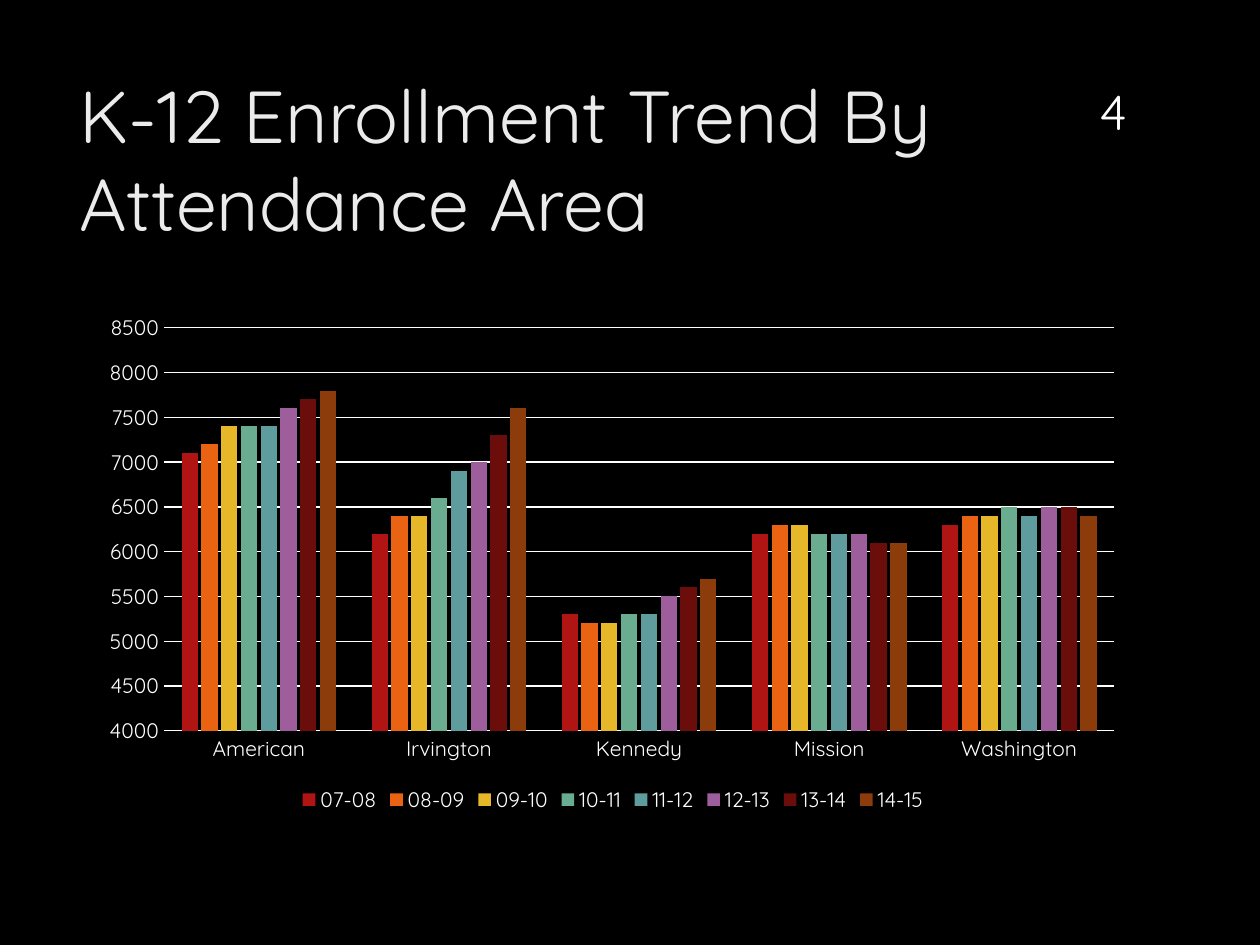
from dataclasses import dataclass

from lxml import etree
from pptx import Presentation, util as u
from pptx.chart.data import CategoryChartData
from pptx.dml.color import RGBColor
from pptx.enum import chart as ch, text

FONT = "Quicksand"
COLORS = {"background": "000000", "title": "EBEBEB", "body": "FFFFFF"}
SLIDE_W, SLIDE_H = u.Inches(10), u.Inches(7.5)
AREAS = ["American", "Irvington", "Kennedy", "Mission", "Washington"]


@dataclass(frozen=True)
class Box:
    """Position and size in inches."""
    left: float
    top: float
    width: float
    height: float

    def lengths(self) -> list:
        return [u.Inches(v) for v in (self.left, self.top, self.width, self.height)]


@dataclass(frozen=True)
class SchoolYear:
    name: str
    color: str
    enrollment: tuple


YEARS = [
    SchoolYear("07-08", "B01513", (7100, 6200, 5300, 6200, 6300)),
    SchoolYear("08-09", "EA6312", (7200, 6400, 5200, 6300, 6400)),
    SchoolYear("09-10", "E6B729", (7400, 6400, 5200, 6300, 6400)),
    SchoolYear("10-11", "6AAC90", (7400, 6600, 5300, 6200, 6500)),
    SchoolYear("11-12", "5F9C9D", (7400, 6900, 5300, 6200, 6400)),
    SchoolYear("12-13", "9E5E9B", (7600, 7000, 5500, 6200, 6500)),
    SchoolYear("13-14", "6A0D0B", (7700, 7300, 5600, 6100, 6500)),
    SchoolYear("14-15", "8C3B0B", (7800, 7600, 5700, 6100, 6400)),
]


def rgb(name: str) -> RGBColor:
    return RGBColor.from_string(COLORS[name])


def style_font(font, size: float, color: str) -> None:
    font.name, font.size, font.bold = FONT, u.Pt(size), False
    font.color.rgb = rgb(color)


def write(frame, words: str, size: float, color: str, align, anchor) -> None:
    frame.word_wrap = True
    frame.auto_size = text.MSO_AUTO_SIZE.NONE
    frame.vertical_anchor = anchor
    paragraph = frame.paragraphs[0]
    paragraph.alignment = align
    run = paragraph.add_run()
    run.text = words
    style_font(run.font, size, color)


def style_line(line) -> None:
    line.color.rgb = rgb("body")
    line.width = u.Pt(0.75)


def place_plot(chart, shares: Box) -> None:
    """Fix the inner plot area, in shares of the chart's size."""
    plot_area = chart.plots[0]._element.getparent()
    ns = etree.QName(plot_area).namespace
    for old in plot_area.findall(f"{{{ns}}}layout"):
        plot_area.remove(old)
    layout = etree.Element(f"{{{ns}}}layout")
    manual = etree.SubElement(layout, f"{{{ns}}}manualLayout")
    settings = [("layoutTarget", "inner"), ("xMode", "edge"), ("yMode", "edge"),
                ("x", shares.left), ("y", shares.top),
                ("w", shares.width), ("h", shares.height)]
    for tag, value in settings:
        etree.SubElement(manual, f"{{{ns}}}{tag}", val=str(value))
    plot_area.insert(0, layout)


def add_enrollment_chart(slide, box: Box) -> None:
    data = CategoryChartData()
    data.categories = AREAS
    for year in YEARS:
        data.add_series(year.name, year.enrollment)
    chart = slide.shapes.add_chart(
        ch.XL_CHART_TYPE.COLUMN_CLUSTERED, *box.lengths(), data).chart
    chart.has_title = False
    style_font(chart.font, 10, "body")

    # Columns
    plot = chart.plots[0]
    plot.vary_by_categories = False
    plot.gap_width, plot.overlap = 218, -22
    for series, year in zip(plot.series, YEARS):
        series.format.fill.solid()
        series.format.fill.fore_color.rgb = RGBColor.from_string(year.color)
        series.format.line.fill.background()

    # Axes and gridlines
    for axis in (chart.category_axis, chart.value_axis):
        axis.major_tick_mark = axis.minor_tick_mark = ch.XL_TICK_MARK.NONE
        style_font(axis.tick_labels.font, 12, "body")
    style_line(chart.category_axis.format.line)
    values = chart.value_axis
    values.minimum_scale, values.maximum_scale, values.major_unit = 4000, 8500, 500
    values.format.line.fill.background()
    values.has_major_gridlines = True
    style_line(values.major_gridlines.format.line)

    # Legend
    chart.has_legend = True
    chart.legend.position = ch.XL_LEGEND_POSITION.BOTTOM
    chart.legend.include_in_layout = False
    style_font(chart.legend.font, 12, "body")
    place_plot(chart, Box(0.07, 0.04, 0.91, 0.79))


def main() -> None:
    deck = Presentation()
    deck.slide_width, deck.slide_height = SLIDE_W, SLIDE_H
    slide = deck.slides.add_slide(deck.slide_layouts.get_by_name("Title Only"))
    slide.background.fill.solid()
    slide.background.fill.fore_color.rgb = rgb("background")

    # Title
    title = slide.shapes.title
    title.left, title.top, title.width, title.height = Box(0.53, 0.49, 7.72, 1.53).lengths()
    write(title.text_frame, "K-12 Enrollment Trend By Attendance Area", 42, "title",
          text.PP_ALIGN.LEFT, text.MSO_ANCHOR.MIDDLE)

    add_enrollment_chart(slide, Box(0.72, 2.44, 8.29, 4.05))

    # Page number
    page_number = slide.shapes.add_textbox(*Box(8.49, 0.32, 0.69, 0.84).lengths())
    write(page_number.text_frame, "4", 28, "body",
          text.PP_ALIGN.CENTER, text.MSO_ANCHOR.BOTTOM)

    deck.save("out.pptx")


if __name__ == "__main__":
    main()
